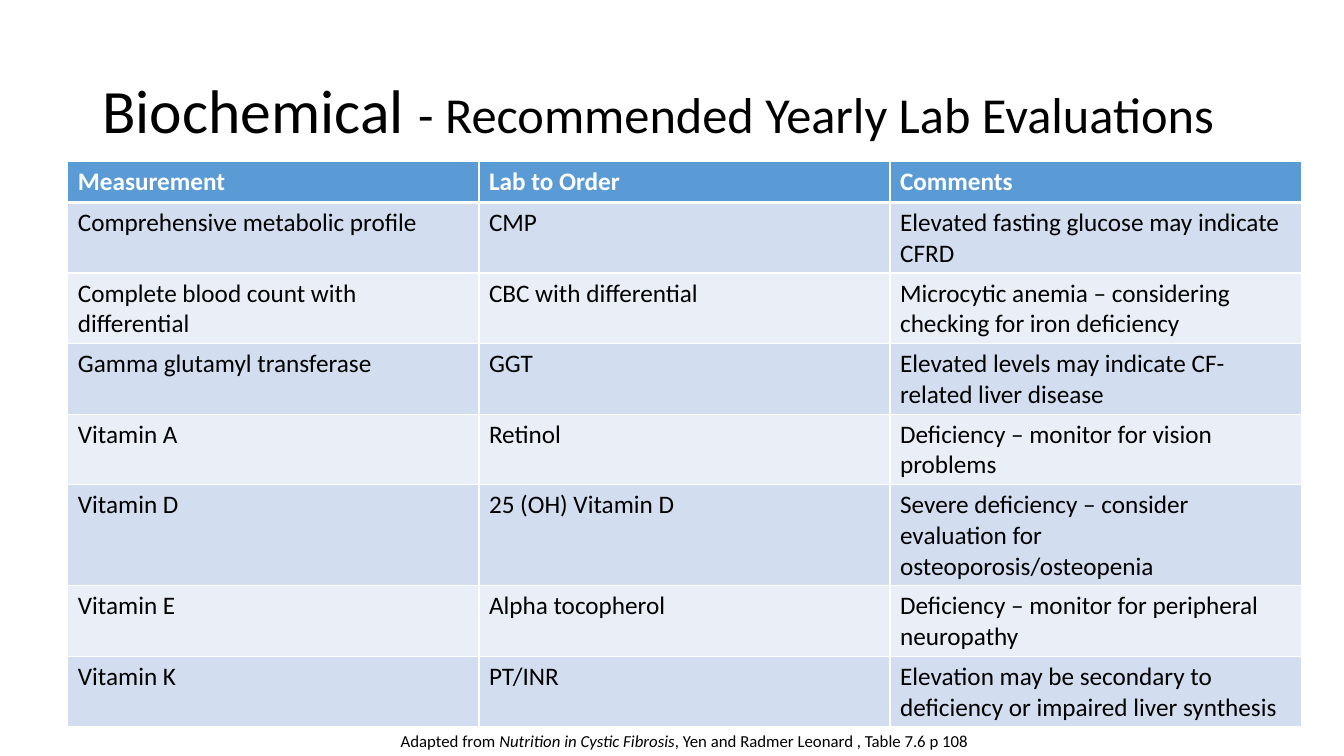
"""Build a slide with a table of yearly lab evaluations."""
from lxml import etree
from pptx import Presentation
from pptx.dml.color import RGBColor
from pptx.enum.text import MSO_ANCHOR, PP_ALIGN
from pptx.oxml.ns import qn
from pptx.util import Cm, Pt

MIDDLE = MSO_ANCHOR.MIDDLE
CENTER = PP_ALIGN.CENTER
FONT = "Calibri"
COLORS = {"text": "000000", "white": "FFFFFF", "head": "5B9BD5",
          "odd": "D2DEEF", "even": "EAEFF7"}
ROWS = [
    ("Measurement", "Lab to Order", "Comments"),
    ("Comprehensive metabolic profile", "CMP",
     "Elevated fasting glucose may indicate CFRD"),
    ("Complete blood count with differential", "CBC with differential",
     "Microcytic anemia – considering checking for iron deficiency"),
    ("Gamma glutamyl transferase", "GGT",
     "Elevated levels may indicate CF-related liver disease"),
    ("Vitamin A", "Retinol", "Deficiency – monitor for vision problems"),
    ("Vitamin D", "25 (OH) Vitamin D",
     "Severe deficiency – consider evaluation for osteoporosis/osteopenia"),
    ("Vitamin E", "Alpha tocopherol",
     "Deficiency – monitor for peripheral neuropathy"),
    ("Vitamin K", "PT/INR",
     "Elevation may be secondary to deficiency or impaired liver synthesis"),
]


def style(font, size, color="text"):
    font.name = FONT
    font.size = Pt(size)
    font.color.rgb = RGBColor.from_string(COLORS[color])


def border(cell, side, width):
    line = etree.SubElement(cell._tc.get_or_add_tcPr(), qn(f"a:ln{side}"),
                            w=str(Pt(width)))
    fill = etree.SubElement(line, qn("a:solidFill"))
    etree.SubElement(fill, qn("a:srgbClr"), val=COLORS["white"])


deck = Presentation()
deck.slide_width, deck.slide_height = Cm(33.87), Cm(19.05)
slide = deck.slides.add_slide(deck.slide_layouts[6])

title = slide.shapes.add_textbox(Cm(2.33), Cm(1.01), Cm(29.21), Cm(3.68))
frame = title.text_frame
frame.word_wrap = True
frame.vertical_anchor = MIDDLE
para = frame.paragraphs[0]
para.line_spacing = 0.9
for text, size in [("Biochemical ", 44),
                   ("- Recommended Yearly Lab Evaluations", 36)]:
    run = para.add_run()
    run.text = text
    style(run.font, size)

table = slide.shapes.add_table(len(ROWS), 3, Cm(1.71), Cm(4.07),
                               Cm(31.08), Cm(8.24)).table
for r, row in enumerate(ROWS):
    shade = "head" if r == 0 else "odd" if r % 2 else "even"
    for c, text in enumerate(row):
        cell = table.cell(r, c)
        cell.text = text
        para = cell.text_frame.paragraphs[0]
        style(para.font, 18, "white" if r == 0 else "text")
        para.font.bold = r == 0
        for side in "LRTB":
            heavy = (r, side) in [(0, "B"), (1, "T")]
            border(cell, side, 3 if heavy else 1)
        cell.fill.solid()
        cell.fill.fore_color.rgb = RGBColor.from_string(COLORS[shade])

source = slide.shapes.add_textbox(Cm(1.71), Cm(18.28), Cm(31.08), Cm(0.77))
source.text_frame.word_wrap = True
para = source.text_frame.paragraphs[0]
para.alignment = CENTER
style(para.font, 12)
for text, slant in [("Adapted from ", False),
                    ("Nutrition in Cystic Fibrosis", True),
                    (", Yen and Radmer Leonard , Table 7.6 p 108", False)]:
    run = para.add_run()
    run.text = text
    run.font.italic = slant

deck.save("out.pptx")
